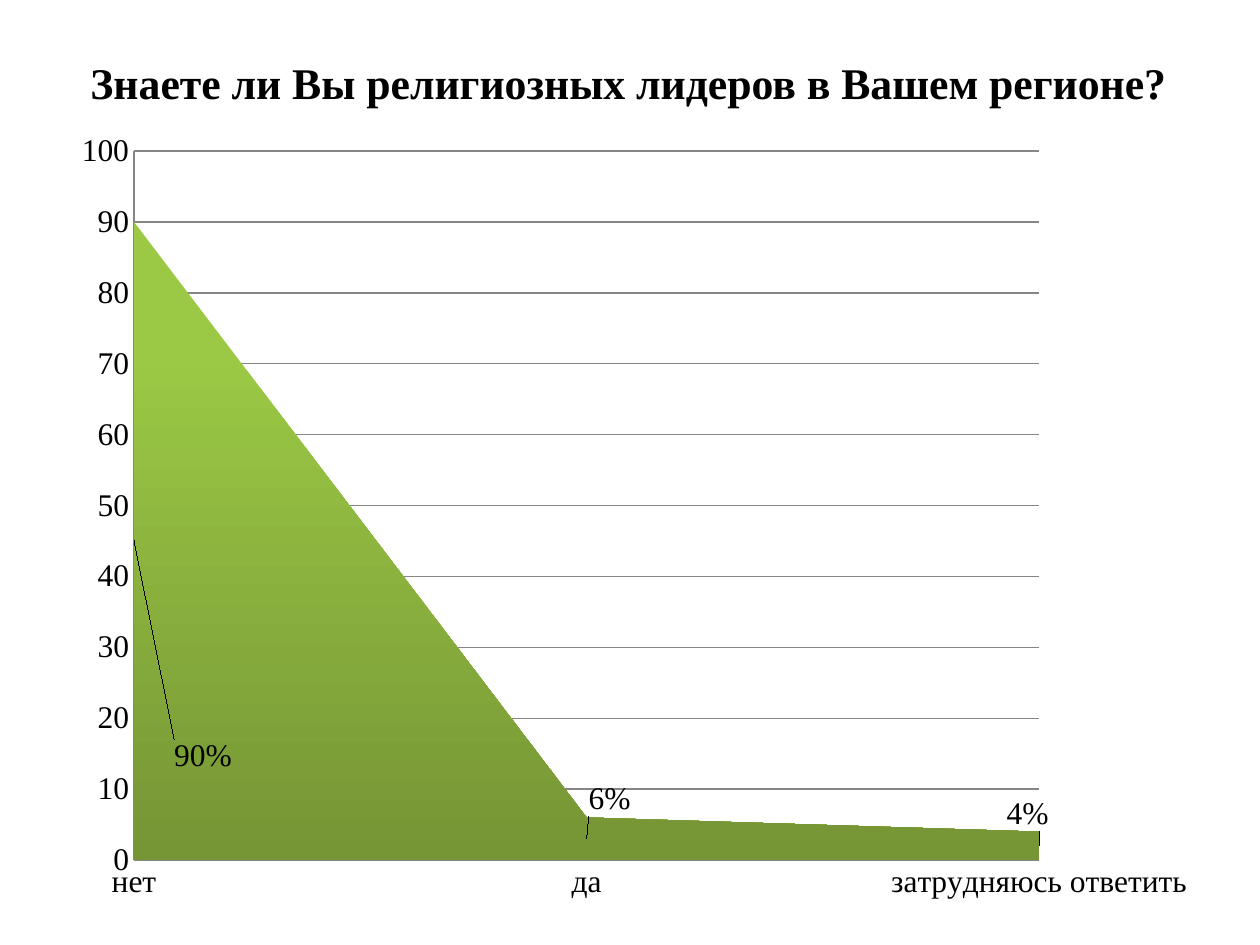
from lxml import etree
from pptx import Presentation
from pptx.chart.data import CategoryChartData
from pptx.dml.color import RGBColor
from pptx.enum import chart as ch, text
from pptx.oxml.ns import qn
from pptx.util import Inches, Pt

BLACK = RGBColor(0x00, 0x00, 0x00)
GRAY = RGBColor(0x86, 0x86, 0x86)
GREEN_LIGHT = RGBColor(0x9B, 0xC9, 0x45)
GREEN_DARK = RGBColor(0x76, 0x95, 0x35)
FONT = "Times New Roman"


def set_font(font, size, bold=False):
    font.name, font.size, font.bold = FONT, Pt(size), bold
    font.color.rgb = BLACK


def manual_layout(**values):
    layout = etree.Element(qn("c:layout"))
    manual = etree.SubElement(layout, qn("c:manualLayout"))
    for tag, val in values.items():
        etree.SubElement(manual, qn("c:" + tag)).set("val", str(val))
    return layout


prs = Presentation()
prs.slide_width, prs.slide_height = Inches(10), Inches(7.5)
s = prs.slides.add_slide(prs.slide_layouts[6])

# Title
tf = s.shapes.add_textbox(Inches(0.62), Inches(0.39), Inches(9.14), Inches(0.52)).text_frame
tf.word_wrap = True
tf.auto_size = text.MSO_AUTO_SIZE.SHAPE_TO_FIT_TEXT
p = tf.paragraphs[0]
p.text = "Знаете ли Вы религиозных лидеров в Вашем регионе?"
set_font(p.font, 25, True)

# Area chart
data = CategoryChartData()
data.categories = ["нет", "да", "затрудняюсь ответить"]
data.add_series("Series 1", (90, 6, 4))
chart = s.shapes.add_chart(ch.XL_CHART_TYPE.AREA, Inches(0.47), Inches(0.94),
                           Inches(9.14), Inches(6.33), data).chart
chart.has_legend = False
chart.has_title = False
set_font(chart.font, 18)

# Plot position within the chart
plot_area = chart.plots[0]._element.getparent()
for old in plot_area.findall(qn("c:layout")):
    plot_area.remove(old)
plot_area.insert(0, manual_layout(layoutTarget="inner", xMode="edge", yMode="edge",
                                  x=0.065, y=0.041, w=0.786, h=0.889))

# Axes: the area starts on the value axis
va, ca = chart.value_axis, chart.category_axis
va.minimum_scale, va.maximum_scale, va.major_unit = 0, 100, 10
va.has_major_gridlines = True
va.major_gridlines.format.line.color.rgb = GRAY
va.major_gridlines.format.line.width = Pt(0.75)
ca.has_major_gridlines = False
for axis in (va, ca):
    axis.major_tick_mark = axis.minor_tick_mark = ch.XL_TICK_MARK.NONE
    axis.format.line.color.rgb = GRAY
va._element.find(qn("c:crossBetween")).set("val", "midCat")

# Green gradient, light at the top
series = chart.plots[0].series[0]
fill = series.format.fill
fill.gradient()
fill.gradient_angle = 270
for stop, color, pos in zip(fill.gradient_stops, (GREEN_LIGHT, GREEN_DARK), (0.2, 1)):
    stop.color.rgb, stop.position = color, pos

# Value labels, each with its offset from the point
labels = [("90%", 0.06, 0.27), ("6%", 0.02, -0.05), ("4%", -0.01, -0.04)]
for i, (label, dx, dy) in enumerate(labels):
    tf = series.points[i].data_label.text_frame
    tf.text = label
    set_font(tf.paragraphs[0].runs[0].font, 18)
    idx = series._element.findall(".//" + qn("c:dLbl"))[i].find(qn("c:idx"))
    idx.addnext(manual_layout(x=dx, y=dy))

prs.save("out.pptx")
